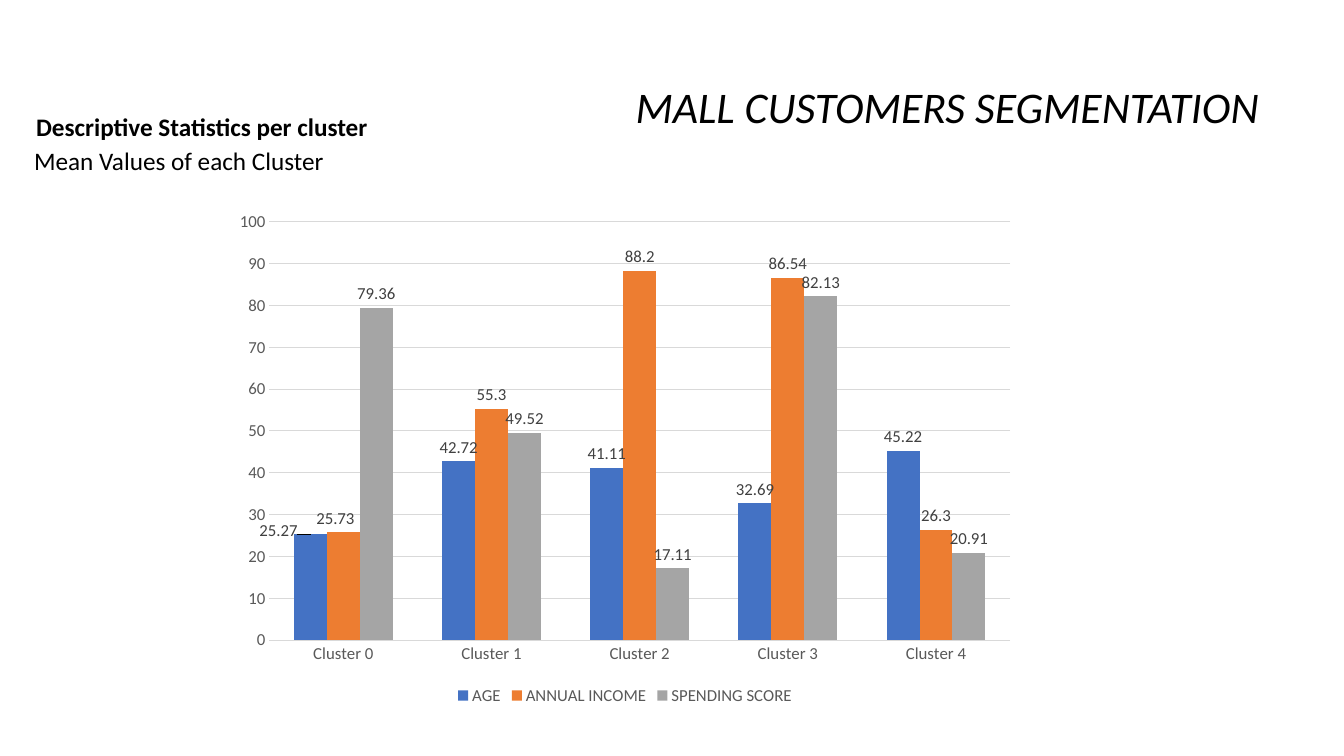
from dataclasses import dataclass

from lxml import etree
from pptx import Presentation
from pptx.chart.chart import Chart
from pptx.chart.data import CategoryChartData
from pptx.dml.color import RGBColor
from pptx.enum.chart import XL_CHART_TYPE, XL_LABEL_POSITION, XL_LEGEND_POSITION, XL_TICK_MARK
from pptx.enum.text import MSO_ANCHOR, PP_ALIGN
from pptx.oxml import parse_xml
from pptx.oxml.ns import nsdecls, qn
from pptx.slide import Slide
from pptx.text.text import Font
from pptx.util import Cm, Pt

COLUMNS = XL_CHART_TYPE.COLUMN_CLUSTERED
OUTSIDE_END = XL_LABEL_POSITION.OUTSIDE_END
LEGEND_BOTTOM = XL_LEGEND_POSITION.BOTTOM
NO_TICKS = XL_TICK_MARK.NONE
TOP = MSO_ANCHOR.TOP
RIGHT = PP_ALIGN.RIGHT

FONT_NAME = "Calibri"
COLORS = {
    "text": "000000",
    "axis": "595959",
    "label": "404040",
    "grid": "D9D9D9",
    "age": "4472C4",
    "income": "ED7D31",
    "score": "A5A5A5",
    "plot": "FFFFFF",
}
CLUSTERS = [f"Cluster {number}" for number in range(5)]


@dataclass
class Measure:
    name: str
    color: str
    means: tuple[float, ...]
    first_label_shift: tuple[float, float] | None = None


@dataclass
class Caption:
    text: str
    left: float
    top: float
    width: float
    bold: bool


MEASURES = [
    Measure("AGE", "age", (25.27, 42.72, 41.11, 32.69, 45.22), (-0.04, 0.02)),
    Measure("ANNUAL INCOME", "income", (25.73, 55.3, 88.2, 86.54, 26.3), (-0.01, 0)),
    Measure("SPENDING SCORE", "score", (79.36, 49.52, 17.11, 82.13, 20.91)),
]
CAPTIONS = [
    Caption("Descriptive Statistics per cluster", 0.66, 2.67, 10.41, True),
    Caption("Mean Values of each Cluster", 0.61, 3.53, 10.08, False),
]


def style_font(font: Font, size: float, color: str) -> None:
    font.name = FONT_NAME
    font.size = Pt(size)
    font.color.rgb = RGBColor.from_string(COLORS[color])


def add_title(slide: Slide) -> None:
    title = slide.shapes.title
    title.left, title.top, title.width, title.height = Cm(9.32), Cm(2.26), Cm(22.66), Cm(3.58)
    text_frame = title.text_frame
    text_frame.text = "MALL CUSTOMERS SEGMENTATION"
    text_frame.vertical_anchor = TOP
    text_frame.margin_top = 0
    paragraph = text_frame.paragraphs[0]
    paragraph.alignment = RIGHT
    paragraph.line_spacing = 0.8
    font = paragraph.runs[0].font
    style_font(font, 31.2, "text")
    font.italic = True


def add_caption(slide: Slide, caption: Caption) -> None:
    box = slide.shapes.add_textbox(Cm(caption.left), Cm(caption.top), Cm(caption.width), Cm(1.02))
    box.text_frame.word_wrap = True
    box.text_frame.text = caption.text
    font = box.text_frame.paragraphs[0].runs[0].font
    style_font(font, 18, "text")
    font.bold = caption.bold


def shift_first_label(series, shift: tuple[float, float]) -> None:
    label = series.points[0].data_label
    style_font(label.font, 12, "label")
    label.position = OUTSIDE_END
    element = series.data_labels._element.find(qn("c:dLbl"))
    layout = parse_xml(
        f'<c:layout {nsdecls("c")}><c:manualLayout>'
        f'<c:x val="{shift[0]}"/><c:y val="{shift[1]}"/>'
        "</c:manualLayout></c:layout>"
    )
    element.find(qn("c:idx")).addnext(layout)


def fill_plot_area(chart: Chart) -> None:
    plot_area = chart._chartSpace.chart.plotArea
    properties = etree.SubElement(plot_area, qn("c:spPr"))
    fill = etree.SubElement(properties, qn("a:solidFill"))
    color = etree.SubElement(fill, qn("a:srgbClr"), val=COLORS["plot"])
    etree.SubElement(color, qn("a:alpha"), val="52000")


def style_axes(chart: Chart) -> None:
    for axis in (chart.category_axis, chart.value_axis):
        axis.major_tick_mark = NO_TICKS
        axis.minor_tick_mark = NO_TICKS
        axis.format.line.fill.background()
        style_font(axis.tick_labels.font, 12, "axis")
    value_axis = chart.value_axis
    value_axis.minimum_scale = 0
    value_axis.maximum_scale = 100
    value_axis.major_unit = 10
    grid_line = value_axis.major_gridlines.format.line
    grid_line.color.rgb = RGBColor.from_string(COLORS["grid"])
    grid_line.width = Pt(0.75)


def add_means_chart(slide: Slide) -> None:
    data = CategoryChartData()
    data.categories = CLUSTERS
    for measure in MEASURES:
        data.add_series(measure.name, measure.means)
    frame = slide.shapes.add_chart(COLUMNS, Cm(5.64), Cm(5.08), Cm(20.22), Cm(12.8), data)
    chart = frame.chart
    style_font(chart.font, 10, "text")
    chart.has_title = False
    chart.has_legend = True
    chart.legend.position = LEGEND_BOTTOM
    chart.legend.include_in_layout = False
    style_font(chart.legend.font, 12, "axis")
    style_axes(chart)

    plot = chart.plots[0]
    plot.gap_width = 150
    plot.overlap = 0
    plot.vary_by_categories = False
    for series, measure in zip(plot.series, MEASURES):
        series.format.fill.solid()
        series.format.fill.fore_color.rgb = RGBColor.from_string(COLORS[measure.color])
        labels = series.data_labels
        labels.show_value = True
        labels.position = OUTSIDE_END
        style_font(labels.font, 12, "label")
        if measure.first_label_shift:
            shift_first_label(series, measure.first_label_shift)
    fill_plot_area(chart)


def main() -> None:
    presentation = Presentation()
    presentation.slide_width = Cm(33.87)
    presentation.slide_height = Cm(19.05)
    slide = presentation.slides.add_slide(presentation.slide_layouts[5])
    add_title(slide)
    add_means_chart(slide)
    for caption in CAPTIONS:
        add_caption(slide, caption)
    presentation.save("out.pptx")


if __name__ == "__main__":
    main()
